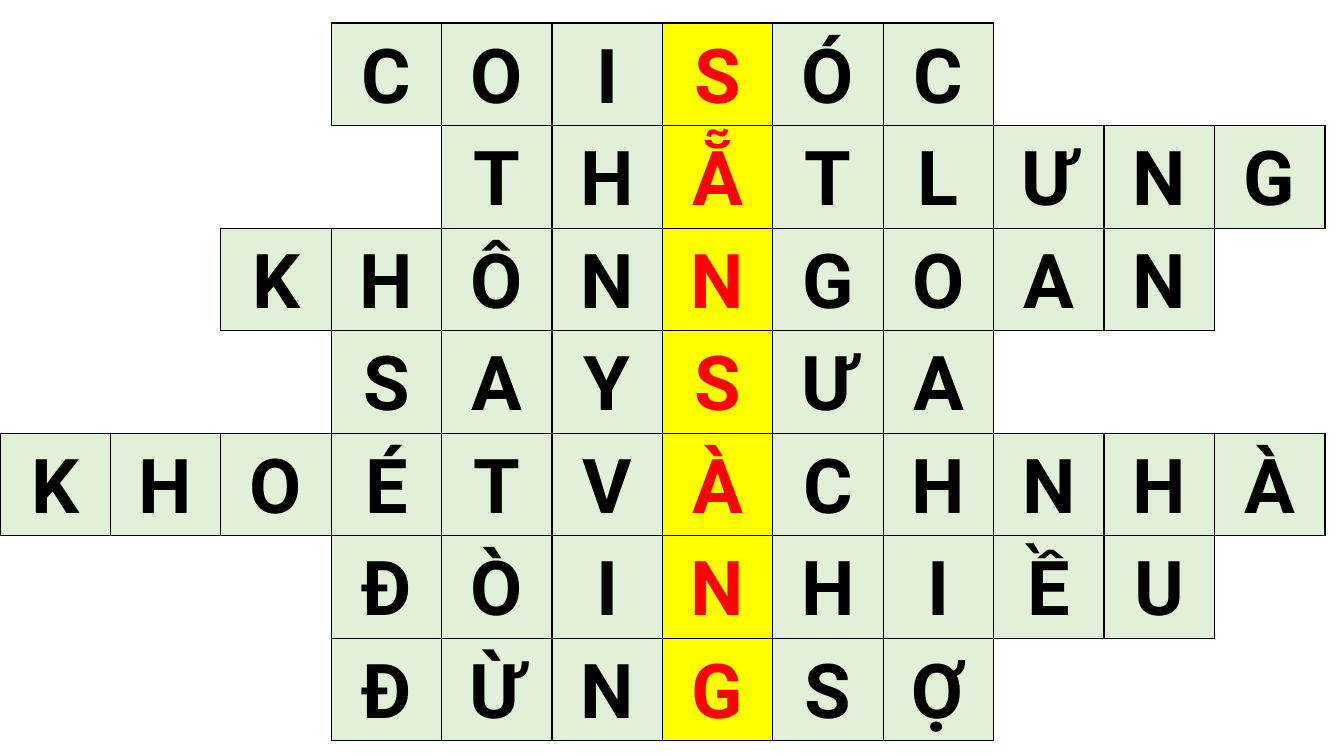
from lxml.etree import SubElement
from pptx import Presentation
from pptx.dml.color import RGBColor
from pptx.enum.text import MSO_ANCHOR, PP_ALIGN
from pptx.oxml.ns import qn
from pptx.util import Pt

PX = 9071  # EMU per px
BLACK = RGBColor(0x00, 0x00, 0x00)
WHITE = RGBColor(0xFF, 0xFF, 0xFF)
RED = RGBColor(0xFF, 0x00, 0x00)
YELLOW = RGBColor(0xFF, 0xFF, 0x00)
GREEN = RGBColor(0xE2, 0xF0, 0xD9)

NO_STYLE = "{2D5ABB26-0587-4C30-8999-92F81FD0307C}"
COLUMNS = 12
KEY_COLUMN = 6
# First column and letters of each answer
ANSWERS = [
    (3, "COISÓC"),
    (4, "THẴTLƯNG"),
    (2, "KHÔNNGOAN"),
    (3, "SAYSƯA"),
    (0, "KHOÉTVÀCHNHÀ"),
    (3, "ĐÒINHIỀU"),
    (3, "ĐỪNGSỢ"),
]


def px(n):
    return round(n * PX)


def add_border(cell, side, visible):
    ln = SubElement(cell._tc.get_or_add_tcPr(), qn(f"a:ln{side}"), w=str(Pt(1)))
    if visible:
        fill = SubElement(ln, qn("a:solidFill"))
        SubElement(fill, qn("a:srgbClr"), val=str(BLACK))
    else:
        SubElement(ln, qn("a:noFill"))


def set_letter(cell, letter, color):
    cell.vertical_anchor = MSO_ANCHOR.MIDDLE
    cell.margin_left = cell.margin_right = px(7)
    cell.margin_top = cell.margin_bottom = 0
    p = cell.text_frame.paragraphs[0]
    p.text = letter
    p.alignment = PP_ALIGN.CENTER
    p.line_spacing = 1.07
    p.space_after = Pt(8)
    p.font.name = "Roboto"
    p.font.size = Pt(54)
    p.font.bold = True
    p.font.color.rgb = color


def add_crossword(s, x, y, w, h):
    frame = s.shapes.add_table(len(ANSWERS), COLUMNS, px(x), px(y), px(w), px(h))
    table = frame.table
    table.first_row = table.horz_banding = False
    table._tbl.tblPr.find(qn("a:tableStyleId")).text = NO_STYLE
    for column in table.columns:
        column.width = px(w / COLUMNS)
    for row in table.rows:
        row.height = px(h / len(ANSWERS))

    letters = {(r, start + i): letter
               for r, (start, word) in enumerate(ANSWERS)
               for i, letter in enumerate(word)}
    for r in range(len(ANSWERS)):
        for c in range(COLUMNS):
            cell = table.cell(r, c)
            # A side shows when a letter stands on either side of it
            neighbours = {"L": (r, c - 1), "R": (r, c + 1),
                          "T": (r - 1, c), "B": (r + 1, c)}
            for side, neighbour in neighbours.items():
                add_border(cell, side, (r, c) in letters or neighbour in letters)
            # Letters, with the key word picked out
            is_key = c == KEY_COLUMN
            cell.fill.solid()
            if (r, c) in letters:
                cell.fill.fore_color.rgb = YELLOW if is_key else GREEN
                set_letter(cell, letters[r, c], RED if is_key else BLACK)
            else:
                cell.fill.fore_color.rgb = WHITE


def main():
    prs = Presentation()
    prs.slide_width, prs.slide_height = px(1344), px(756)
    s = prs.slides.add_slide(prs.slide_layouts[6])
    add_crossword(s, 0, 23, 1325, 718)
    prs.save("out.pptx")


if __name__ == "__main__":
    main()
